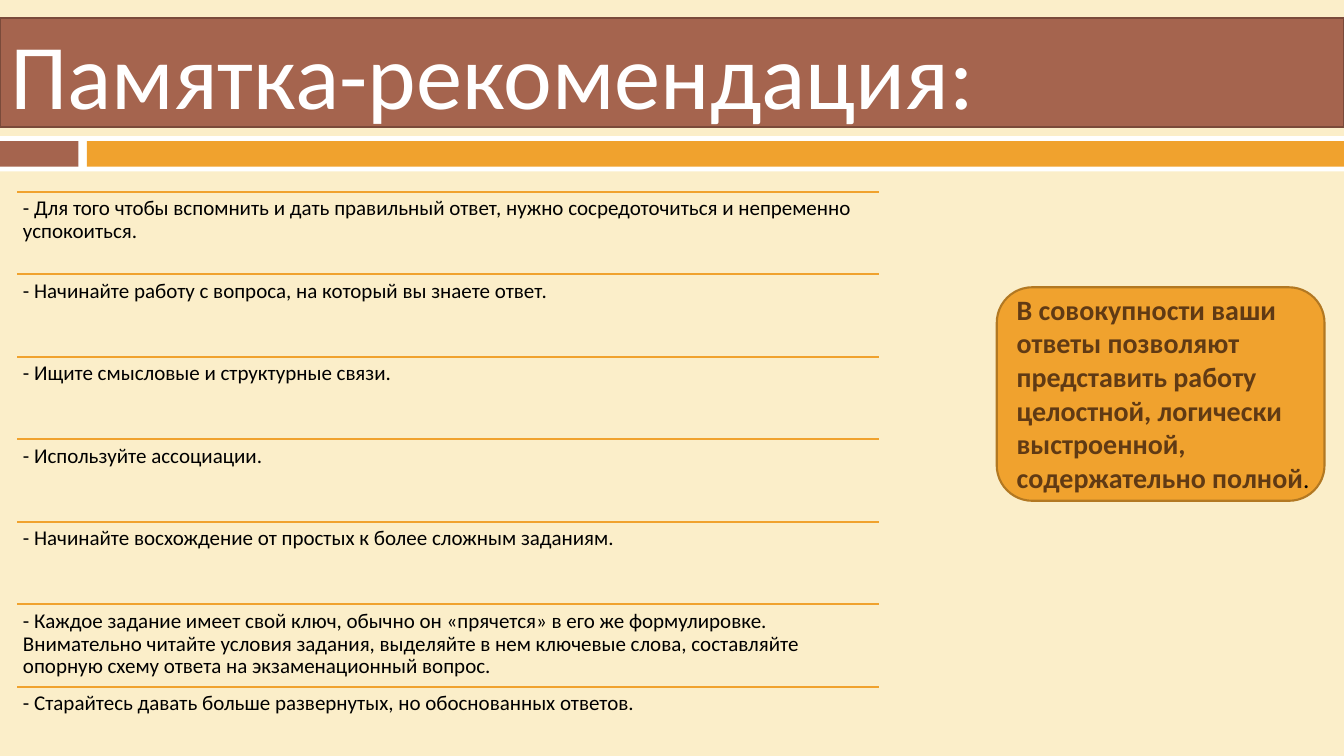
from lxml import etree
from pptx import Presentation
from pptx import util as u
from pptx.dml.color import RGBColor
from pptx.enum import shapes, text
from pptx.oxml import ns

COLORS = {
    "cream": "FBEEC9",
    "white": "FFFFFF",
    "black": "000000",
    "brick": "A5644E",
    "brick_edge": "7A4A3A",
    "amber": "F0A22E",
    "amber_edge": "B27822",
    "brown": "603A14",
}
SLIDE_WIDTH = 33.87
TIPS = [
    "- Для того чтобы вспомнить и дать правильный ответ, нужно сосредоточиться и непременно успокоиться.",
    "- Начинайте работу с вопроса, на который вы знаете ответ.",
    "- Ищите смысловые и структурные связи.",
    "- Используйте ассоциации.",
    "- Начинайте восхождение от простых к более сложным заданиям.",
    "- Каждое задание имеет свой ключ, обычно он «прячется» в его же формулировке. "
    "Внимательно читайте условия задания, выделяйте в нем ключевые слова, "
    "составляйте опорную схему ответа на экзаменационный вопрос.",
    "- Старайтесь давать больше развернутых, но обоснованных ответов.",
]
TIP_LEFT, TIP_TOP, TIP_WIDTH, TIP_HEIGHT = 0.43, 4.83, 21.73, 2.08


def rgb(name):
    return RGBColor.from_string(COLORS[name])


def box(left, top, width, height):
    return [u.Cm(length) for length in (left, top, width, height)]


def paint(shape, fill, edge=None):
    shape.fill.solid()
    shape.fill.fore_color.rgb = rgb(fill)
    if edge:
        shape.line.color.rgb = rgb(edge)
        shape.line.width = u.Pt(1.5)
    else:
        shape.line.fill.background()


def add_panel(slide, area, fill, edge=None, kind=shapes.MSO_SHAPE.RECTANGLE):
    panel = slide.shapes.add_shape(kind, *box(*area))
    panel.shadow.inherit = False
    paint(panel, fill, edge)


def add_rule(slide, left, top, width):
    rule = slide.shapes.add_connector(
        shapes.MSO_CONNECTOR.STRAIGHT, u.Cm(left), u.Cm(top), u.Cm(left + width), u.Cm(top)
    )
    rule.line.color.rgb = rgb("amber")
    rule.line.width = u.Pt(1.5)
    etree.SubElement(rule.element.spPr, ns.qn("a:effectLst"))


def write(paragraph, words, size, color="black", bold=False):
    run = paragraph.add_run()
    run.text = words
    run.font.name = "Calibri"
    run.font.size = u.Pt(size)
    run.font.bold = bold
    run.font.color.rgb = rgb(color)


def add_frame(slide, area, inset=None):
    frame = slide.shapes.add_textbox(*box(*area)).text_frame
    frame.word_wrap = True
    if inset is not None:
        frame.margin_left = frame.margin_right = u.Cm(inset)
        frame.margin_top = frame.margin_bottom = u.Cm(inset)
    return frame


def add_title(slide):
    title = slide.shapes.title
    title.left, title.top, title.width, title.height = box(0, 0.46, SLIDE_WIDTH, 2.74)
    paint(title, "brick", "brick_edge")
    frame = title.text_frame
    frame.auto_size = text.MSO_AUTO_SIZE.NONE
    frame.vertical_anchor = text.MSO_ANCHOR.MIDDLE
    heading = frame.paragraphs[0]
    heading.alignment = text.PP_ALIGN.LEFT
    write(heading, "Памятка-рекомендация:", size=66, color="white")


def add_tip(slide, top, words):
    add_rule(slide, TIP_LEFT, top, TIP_WIDTH)
    tip = add_frame(slide, (TIP_LEFT, top, TIP_WIDTH, TIP_HEIGHT), inset=0.15).paragraphs[0]
    tip.line_spacing = 0.9
    write(tip, words, size=15)


def add_conclusion(slide):
    add_panel(slide, (25.12, 7.24, 8.26, 5.38), "amber", "amber_edge",
              shapes.MSO_SHAPE.ROUNDED_RECTANGLE)
    conclusion = add_frame(slide, (25.37, 7.24, 8, 5.38)).paragraphs[0]
    write(conclusion, "В совокупности ваши ответы позволяют представить работу целостной, "
          "логически выстроенной, содержательно полной", size=20, color="brown", bold=True)
    write(conclusion, ".", size=18)


def main():
    deck = Presentation()
    deck.slide_width, deck.slide_height = u.Cm(SLIDE_WIDTH), u.Cm(19.05)
    slide = deck.slides.add_slide(deck.slide_layouts.get_by_name("Title Only"))
    slide.background.fill.solid()
    slide.background.fill.fore_color.rgb = rgb("cream")

    add_panel(slide, (0, 3.43, SLIDE_WIDTH, 0.89), "white")
    add_panel(slide, (0, 3.56, 1.98, 0.64), "brick")
    add_panel(slide, (2.19, 3.56, SLIDE_WIDTH - 2.19, 0.64), "amber")
    add_title(slide)
    for row, words in enumerate(TIPS):
        add_tip(slide, TIP_TOP + row * TIP_HEIGHT, words)
    add_conclusion(slide)
    deck.save("out.pptx")


if __name__ == "__main__":
    main()
